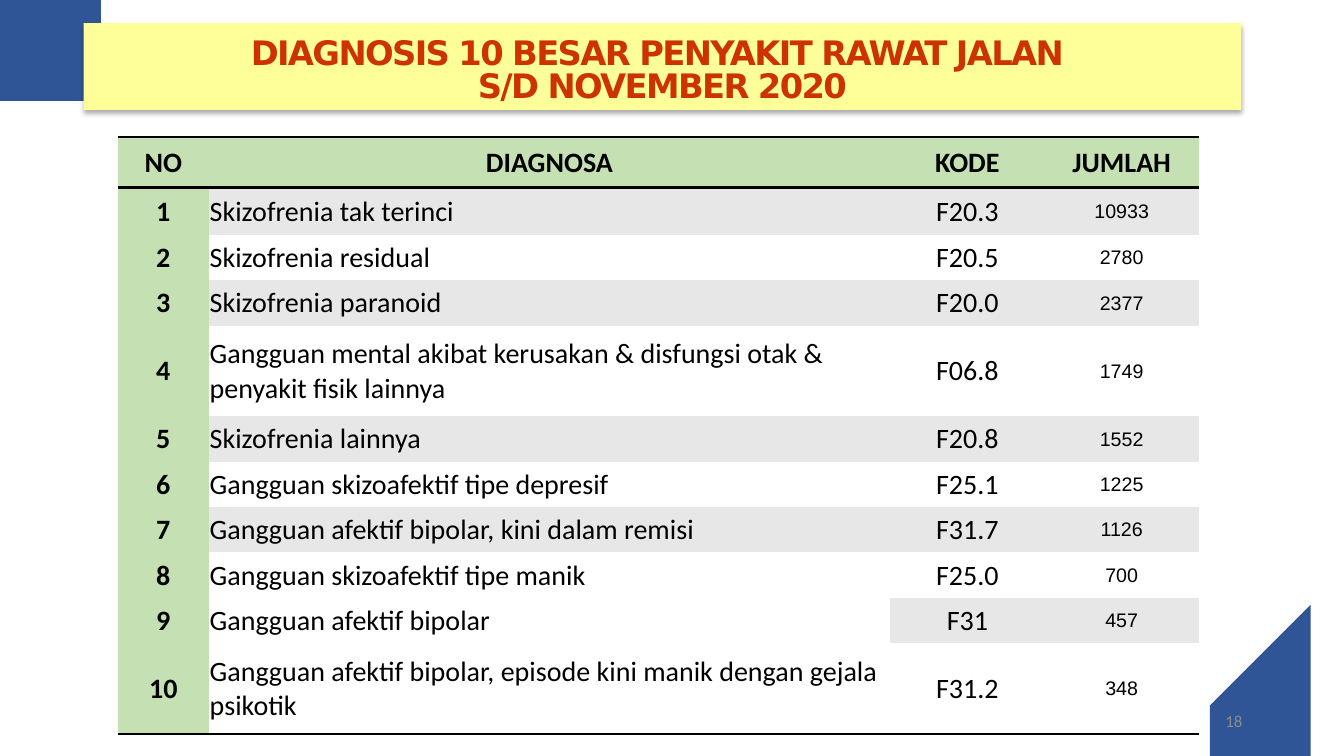
from lxml.etree import SubElement as Sub, Element
from pptx import Presentation
from pptx.dml.color import RGBColor
from pptx.enum.text import MSO_ANCHOR as Anchor, MSO_AUTO_SIZE as Fit, PP_ALIGN as Align
from pptx.oxml.ns import qn
from pptx.util import Inches, Pt

W, H = 13.33, 7.5
TITLE = ["DIAGNOSIS 10 BESAR PENYAKIT RAWAT JALAN ", "S/D NOVEMBER 2020"]
HEAD = ["NO", "DIAGNOSA", "KODE", "JUMLAH"]
ROWS = [
    ("Skizofrenia tak terinci", "F20.3", 10933),
    ("Skizofrenia residual", "F20.5", 2780),
    ("Skizofrenia paranoid", "F20.0", 2377),
    ("Gangguan mental akibat kerusakan & disfungsi otak & penyakit fisik lainnya", "F06.8", 1749),
    ("Skizofrenia lainnya", "F20.8", 1552),
    ("Gangguan skizoafektif tipe depresif", "F25.1", 1225),
    ("Gangguan afektif bipolar, kini dalam remisi", "F31.7", 1126),
    ("Gangguan skizoafektif tipe manik", "F25.0", 700),
    ("Gangguan afektif bipolar", "F31", 457),
    ("Gangguan afektif bipolar, episode kini manik dengan gejala psikotik", "F31.2", 348),
]
PAGE = "18"
COLS = [0.9, 6.76, 1.53, 1.53]
STEP = 0.45
TALL = (4, 10)
BARE = (9, 10)
BLUE, GREEN, GREY, WHITE, BLACK = "2F5597", "C5E0B3", "E7E7E7", "FFFFFF", "000000"
CORNERS = [
    ([(W, H), (12.11, H), (12.04, 7.36)], [(11.9, 7.06), (12.03, 6.69), (12.34, 6.55)], [(W, 6.09)]),
    ([(0, 0), (1.22, 0), (1.29, 0.15)], [(1.43, 0.46), (1.29, 0.83), (0.99, 0.97)], [(0, 1.42)]),
]


def color(text):
    return RGBColor.from_string(text)


def paint(shape, fill):
    shape.fill.solid()
    shape.fill.fore_color.rgb = color(fill)


def write(para, text, size, face, ink, bold=False):
    run = para.add_run()
    run.text = text
    font = run.font
    font.size, font.name, font.bold = Pt(size), face, bold
    font.color.rgb = color(ink)
    return run


def curve(start, bend, count=16):
    knots = [start] + bend
    for i in range(1, count + 1):
        t = i / count
        parts = [(1 - t) ** 3, 3 * t * (1 - t) ** 2, 3 * t * t * (1 - t), t ** 3]
        yield tuple(sum(p * k[axis] for p, k in zip(parts, knots)) for axis in (0, 1))


def corner(slide, lead, bend, tail):
    dots = lead + list(curve(lead[-1], bend)) + tail
    form = slide.shapes.build_freeform(*dots[0], scale=Inches(1))
    form.add_line_segments(dots[1:], close=True)
    shape = form.convert_to_shape()
    shape.shadow.inherit = False
    paint(shape, BLUE)
    shape.line.fill.background()


def banner(slide):
    title = slide.shapes.title
    title.left, title.top, title.width, title.height = map(Inches, (0.83, 0.23, 11.48, 0.86))
    slide.shapes._spTree.append(title._element)
    paint(title, "FFFF99")
    effect = Sub(title._element.spPr, qn("a:effectLst"))
    shade = Sub(effect, qn("a:outerShdw"), blurRad=str(Pt(3.5)), dist=str(Pt(2.2)),
                dir="5400000", algn="t", rotWithShape="0")
    tint = Sub(shade, qn("a:srgbClr"), val=BLACK)
    Sub(tint, qn("a:alpha"), val="32000")
    frame = title.text_frame
    frame.word_wrap, frame.auto_size = True, Fit.NONE
    frame.vertical_anchor = Anchor.BOTTOM
    para = frame.paragraphs[0]
    para.alignment, para.line_spacing = Align.CENTER, 0.8
    for i, text in enumerate(TITLE):
        if i:
            para.add_line_break()
        run = write(para, text, 24.1, "DejaVu Sans", "CC3300", True)
        run.font._element.set("spc", "-120")


def rule(cell, sides):
    props = cell._tc.get_or_add_tcPr()
    for i, side in enumerate(sides):
        line = Element(qn("a:" + side), w=str(Pt(2)))
        Sub(Sub(line, qn("a:solidFill")), qn("a:srgbClr"), val=BLACK)
        props.insert(i, line)


def grid(slide):
    data = [HEAD] + [(n, *row) for n, row in enumerate(ROWS, 1)]
    highs = [0.5, 0.47] + [STEP * (2 if r in TALL else 1) for r in range(2, len(data))]
    spot = map(Inches, (1.17, 1.36, sum(COLS), sum(highs)))
    table = slide.shapes.add_table(len(data), len(COLS), *spot).table
    table.first_row = table.horz_banding = False
    table._tbl.tblPr.find(qn("a:tableStyleId")).text = "{2D5ABB26-0587-4C30-8999-92F81FD0307C}"
    for col, wide in zip(table.columns, COLS):
        col.width = Inches(wide)
    for row, high in zip(table.rows, highs):
        row.height = Inches(high)
    for r, line in enumerate(data):
        for c, value in enumerate(line):
            cell = table.cell(r, c)
            cell.vertical_anchor = Anchor.MIDDLE
            cell.margin_left = cell.margin_right = cell.margin_top = Inches(0.01)
            cell.margin_bottom = 0
            key = r == 0 or c == 0
            if c == 1 and r in BARE:
                cell.fill.background()
            else:
                paint(cell, GREEN if key else GREY if r % 2 else WHITE)
            para = cell.text_frame.paragraphs[0]
            para.alignment = Align.LEFT if c == 1 and r else Align.CENTER
            small = c == 3 and r > 0
            write(para, str(value), 14 if small else 20, "Arial" if small else "Calibri", BLACK, key)
            if r == 0:
                rule(cell, ["lnT", "lnB"])
            elif r == len(data) - 1:
                rule(cell, ["lnB"])


def number(slide):
    frame = slide.shapes.add_textbox(*map(Inches, (9.42, 6.95, 3, 0.4))).text_frame
    frame.word_wrap = True
    frame.vertical_anchor = Anchor.MIDDLE
    para = frame.paragraphs[0]
    para.alignment = Align.RIGHT
    write(para, PAGE, 12, "Calibri", "8C8C8C")


def main():
    deck = Presentation()
    deck.slide_width, deck.slide_height = Inches(W), Inches(H)
    slide = deck.slides.add_slide(deck.slide_layouts[5])
    for parts in CORNERS:
        corner(slide, *parts)
    banner(slide)
    number(slide)
    grid(slide)
    deck.save("out.pptx")


if __name__ == "__main__":
    main()
